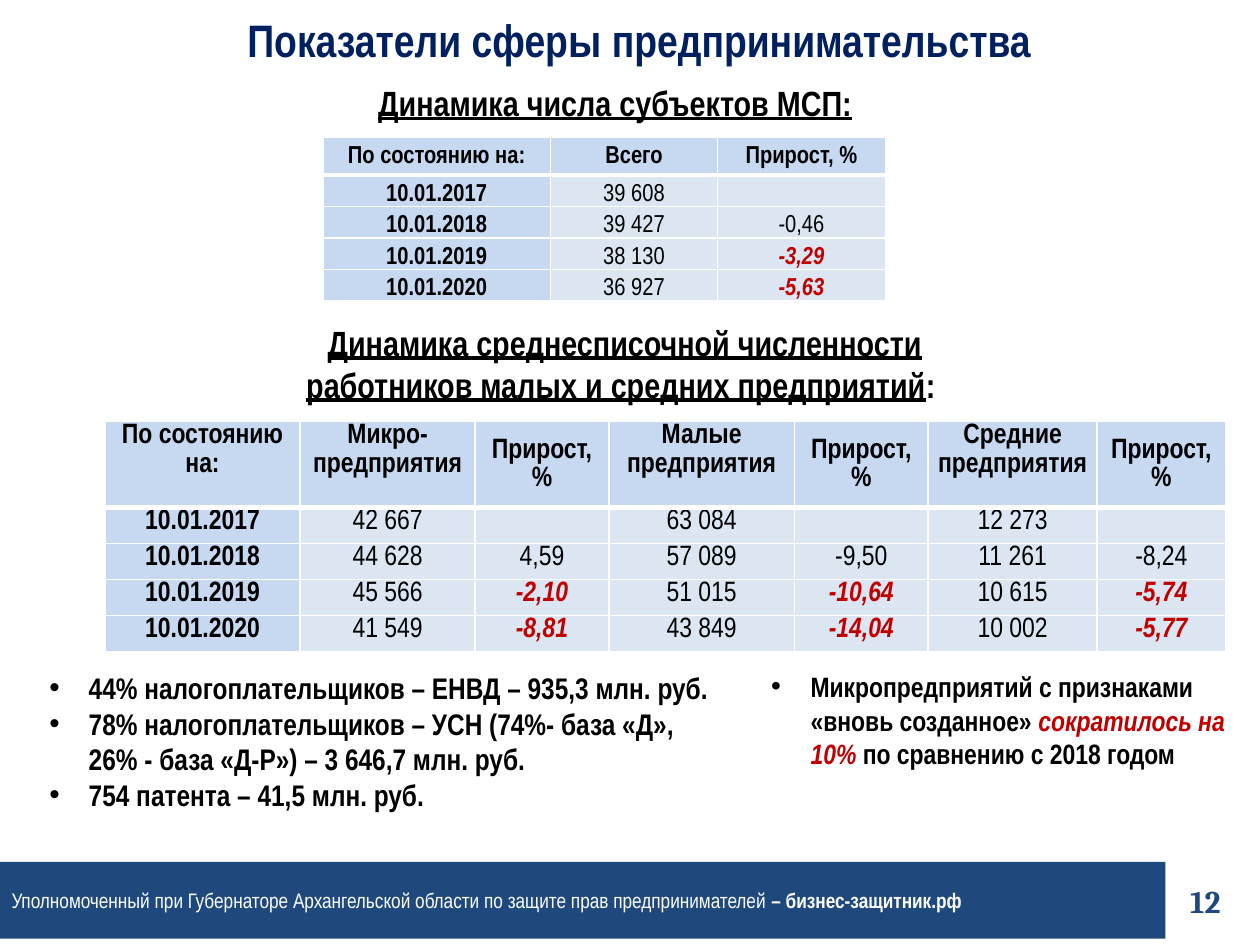
from lxml import etree
from pptx import Presentation
from pptx.dml.color import RGBColor
from pptx.enum import shapes, text
from pptx.oxml import ns
from pptx.util import Pt

BLACK, RED, BLUE, WHITE = "000000", "C00000", "1F497D", "FFFFFF"
HEAD, BODY = "C6D9F1", "DCE6F2"
CENTER, LEFT = text.PP_ALIGN.CENTER, text.PP_ALIGN.LEFT
TOP, MIDDLE, BOTTOM = (text.MSO_ANCHOR.TOP, text.MSO_ANCHOR.MIDDLE,
                       text.MSO_ANCHOR.BOTTOM)


def color(code):
    return RGBColor.from_string(code)


def write(par, runs, size, align=LEFT, **base):
    """Fill a paragraph with (words, format) runs over a base format."""
    par.alignment = align
    for words, extra in runs:
        run = par.add_run()
        run.text = words
        look = {"name": "Arial Narrow", "bold": True, "color": BLACK,
                **base, **extra}
        run.font.size = Pt(size)
        run.font.color.rgb = color(look.pop("color"))
        for key, value in look.items():
            setattr(run.font, key, value)


deck = Presentation()
deck.slide_width, deck.slide_height = Pt(720), Pt(540)
slide = deck.slides.add_slide(deck.slide_layouts[3])
title, left, right = slide.placeholders

# Title and the two bulleted lists
alarm = {"color": RED, "italic": True}
lists = [
    (title, (8.5, 3.5, 720, 39), 26, CENTER,
     [[("Показатели сферы предпринимательства ", {"color": "002060"})]]),
    (left, (21, 379, 396, 90), 17, LEFT,
     [[("44% налогоплательщиков – ЕНВД – 935,3 млн. руб.", {})],
      [("78% налогоплательщиков – УСН (74%- база «Д», "
        "26% - база «Д-Р») – 3 646,7 млн. руб.", {})],
      [("754 патента – 41,5 млн. руб.", {})]]),
    (right, (433.5, 379, 294.5, 65.5), 16, LEFT,
     [[("Микропредприятий с признаками «вновь созданное» ", {}),
       ("сократилось на 10%", alarm),
       (" по сравнению с 2018 годом", {})]]),
]
for holder, box, size, align, pars in lists:
    holder.left, holder.top, holder.width, holder.height = map(Pt, box)
    frame = holder.text_frame
    frame.auto_size = text.MSO_AUTO_SIZE.NONE
    frame.vertical_anchor = TOP
    for i, runs in enumerate(pars):
        par = frame.add_paragraph() if i else frame.paragraphs[0]
        write(par, runs, size, align)
        par.space_before = Pt(0)
        if holder is not title:
            props = par._p.get_or_add_pPr()
            props.set("marL", str(Pt(22.5)))
            props.set("indent", str(Pt(-22.5)))
            etree.SubElement(props, ns.qn("a:buChar"), char="•")

# Section headings and page number
under = {"underline": True}
labels = [
    ((144.5, 43, 414, 32), 20, TOP,
     [("Динамика числа субъектов МСП:", under)]),
    ((150, 180, 414, 68), 20, TOP,
     [("Динамика среднесписочной численности работников "
       "малых и средних предприятий", under), (": ", {})]),
    ((666, 500.5, 45.5, 29), 18, MIDDLE,
     [("12", {"name": "Cambria", "color": BLUE})]),
]
for box, size, anchor, runs in labels:
    frame = slide.shapes.add_textbox(*map(Pt, box)).text_frame
    frame.word_wrap = True
    frame.vertical_anchor = anchor
    write(frame.paragraphs[0], runs, size, CENTER)

# Footer band
band = slide.shapes.add_shape(shapes.MSO_SHAPE.RECTANGLE,
                              *map(Pt, (-0.5, 492.5, 666.5, 44)))
band.shadow.inherit = False
band.fill.solid()
band.fill.fore_color.rgb = color(BLUE)
band.line.fill.background()
band.text_frame.word_wrap = False
band.text_frame.vertical_anchor = MIDDLE
write(band.text_frame.paragraphs[0],
      [("Уполномоченный при Губернаторе Архангельской области "
        "по защите прав предпринимателей ", {"bold": False}),
       ("– бизнес-защитник.рф", {})], 12, color=WHITE)

# Tables: place, column widths, row heights, size, anchors, rows
rise = "Прирост, %"
tables = [
    ((184.5, 78.5), (130, 95.5, 96), (21.5, 17.8), 14, MIDDLE, BOTTOM, [
        ("По состоянию на:", "Всего", rise),
        ("10.01.2017", "39 608", ""),
        ("10.01.2018", "39 427", "-0,46"),
        ("10.01.2019", "38 130", "-3,29"),
        ("10.01.2020", "36 927", "-5,63")]),
    ((60, 241), (111.5, 100, 76.5, 106, 76.5, 96.5, 73.5), (49, 20.5),
     16, TOP, TOP, [
        ("По состоянию на:", "Микро-предприятия", rise,
         "Малые предприятия", rise, "Средние предприятия", rise),
        ("10.01.2017", "42 667", "", "63 084", "", "12 273", ""),
        ("10.01.2018", "44 628", "4,59", "57 089", "-9,50",
         "11 261", "-8,24"),
        ("10.01.2019", "45 566", "-2,10", "51 015", "-10,64",
         "10 615", "-5,74"),
        ("10.01.2020", "41 549", "-8,81", "43 849", "-14,04",
         "10 002", "-5,77")]),
]
for place, widths, (first, rest), size, upper, lower, rows in tables:
    tall = first + rest * (len(rows) - 1)
    grid = slide.shapes.add_table(len(rows), len(widths), *map(Pt, place),
                                  Pt(sum(widths)), Pt(tall)).table
    for col, wide in zip(grid.columns, widths):
        col.width = Pt(wide)
    for r, row in enumerate(rows):
        grid.rows[r].height = Pt(rest if r else first)
        for c, words in enumerate(row):
            cell = grid.cell(r, c)
            cell.margin_left = cell.margin_right = Pt(5)
            cell.margin_top = cell.margin_bottom = 0
            cell.vertical_anchor = (MIDDLE if words == rise
                                    else lower if r else upper)
            par = cell.text_frame.paragraphs[0]
            par.line_spacing = 1.07
            if words:
                drop = r > 2 and c and c % 2 == 0
                look = alarm if drop else {"bold": r == 0 or c == 0}
                write(par, [(words, look)], size, CENTER)
            else:
                par._p.get_or_add_endParaRPr().set("sz", str(size * 100))
            props = cell._tc.get_or_add_tcPr()
            for side in "LRTB":
                thick = 3 if (r, side) in ((0, "B"), (1, "T")) else 1
                line = etree.SubElement(props, ns.qn("a:ln" + side),
                                        w=str(Pt(thick)))
                fill = etree.SubElement(line, ns.qn("a:solidFill"))
                etree.SubElement(fill, ns.qn("a:srgbClr"), val=WHITE)
            cell.fill.solid()
            cell.fill.fore_color.rgb = color(BODY if r and c else HEAD)

deck.save("out.pptx")
